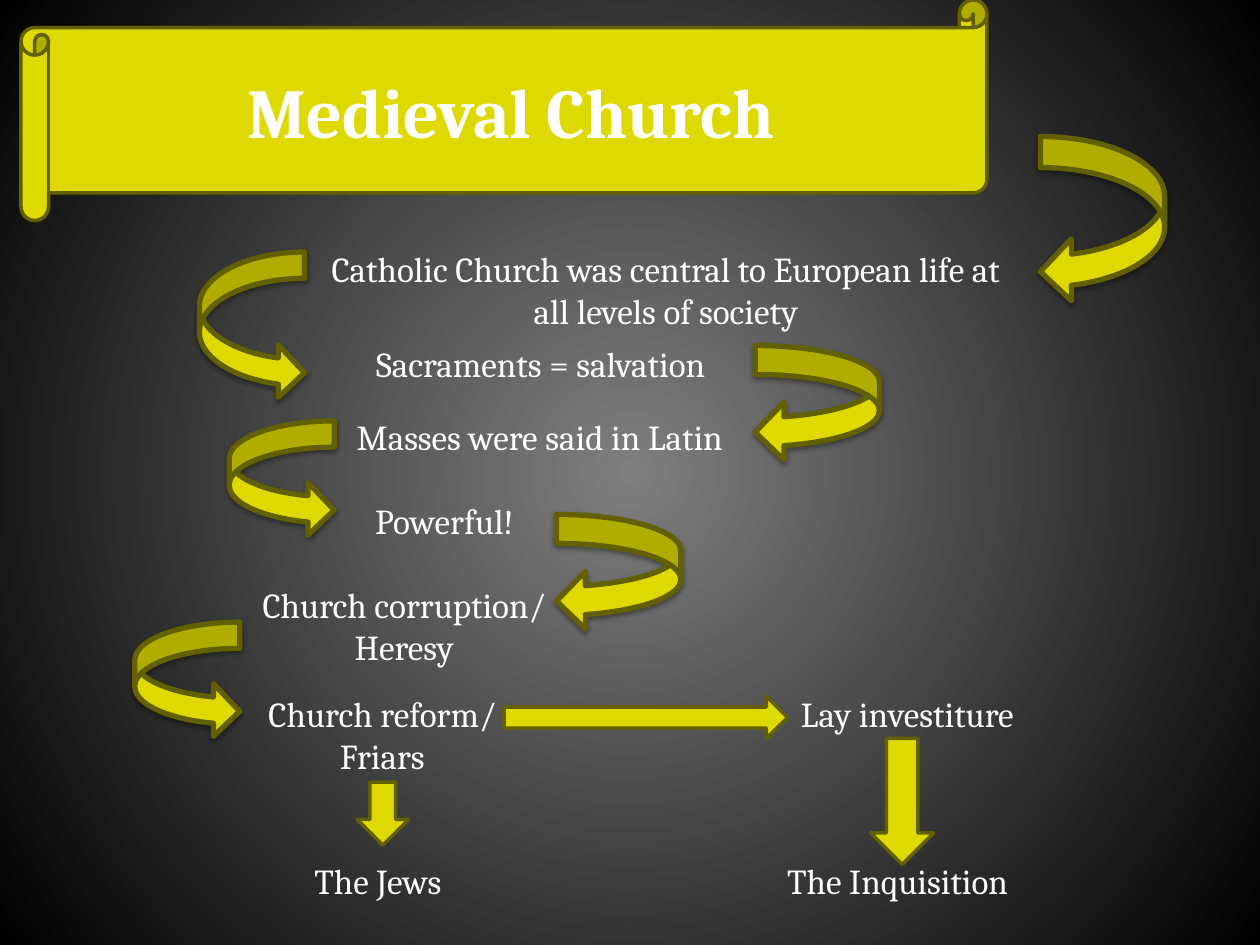
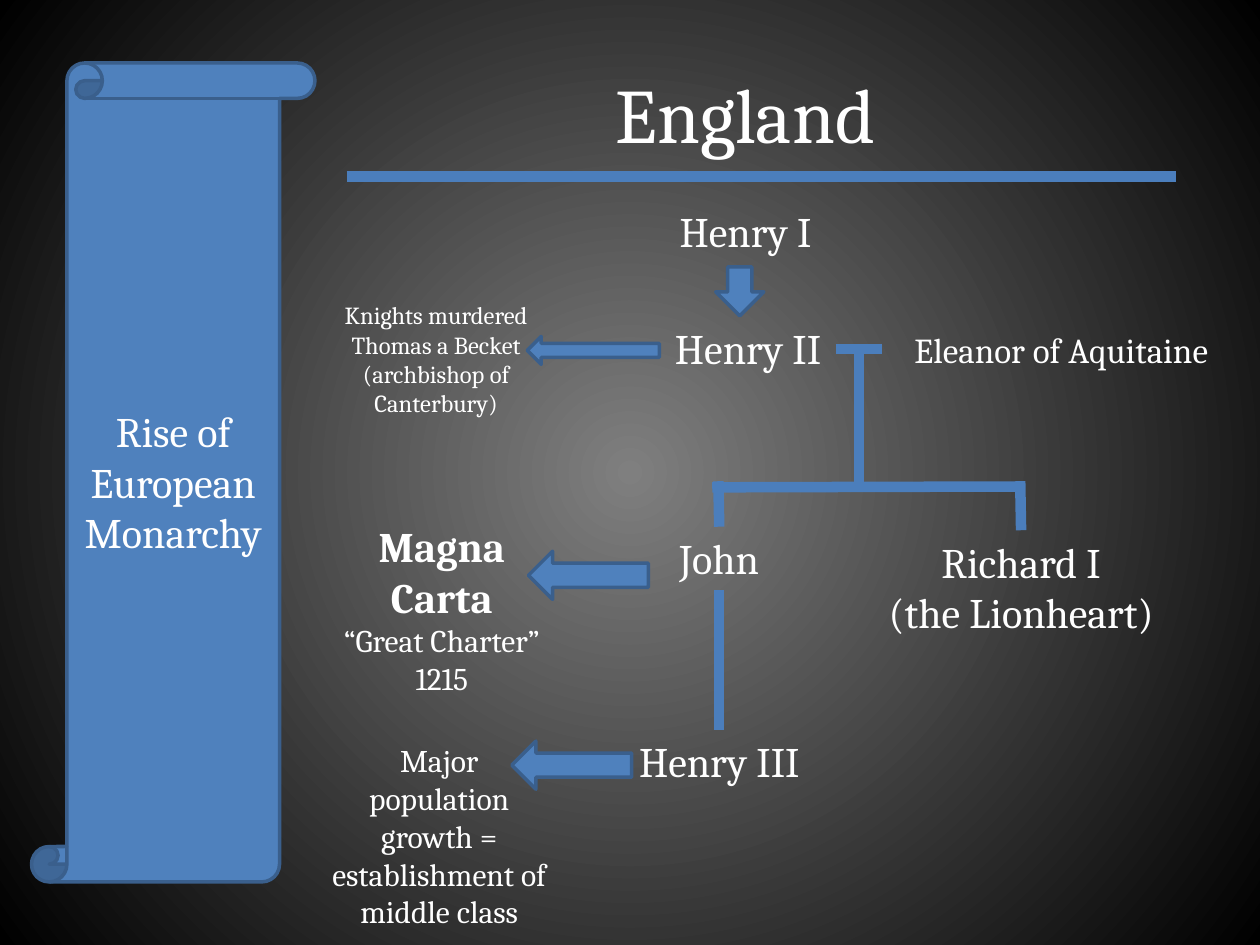
from dataclasses import dataclass

from lxml import etree
from pptx import Presentation
from pptx.dml.color import RGBColor
from pptx.enum.shapes import MSO_CONNECTOR, MSO_SHAPE
from pptx.enum.text import MSO_ANCHOR, PP_ALIGN
from pptx.oxml.ns import qn
from pptx.shapes.autoshape import Shape
from pptx.shapes.connector import Connector
from pptx.slide import Slide
from pptx.util import Pt

FONT = "Cambria"
WHITE = "FFFFFF"
BACKDROP = ("7F7F7F", "000000")
TOP, LEFT, BOTTOM, RIGHT = range(4)


@dataclass(frozen=True)
class Palette:
    fill: str
    outline: str


GOLD = Palette("DED900", "626000")
BLUE = Palette("4F81BD", "3A5F8C")
TREE_LINE = "4B7EBC"


@dataclass(frozen=True)
class Box:
    left: float
    top: float
    width: float
    height: float

    def lengths(self) -> tuple:
        return Pt(self.left), Pt(self.top), Pt(self.width), Pt(self.height)


@dataclass(frozen=True)
class Label:
    text: str
    box: Box
    size: float = 20
    bold: bool = False
    align: PP_ALIGN = PP_ALIGN.CENTER


@dataclass(frozen=True)
class Arrow:
    """A block arrow; the box is the one before turning, 0 points down."""
    box: Box
    turn: float = 0


CHURCH_POINTS = [
    Label("Catholic Church was central to European life at all levels of society",
          Box(173.5, 138, 414, 55.5)),
    Label("Sacraments = salvation", Box(174, 192, 270, 31.5)),
    Label("Masses were said in Latin", Box(173.5, 234, 270, 31.5)),
    Label("Powerful!", Box(179, 282, 150, 31.5)),
    Label("Church corruption/\nHeresy", Box(24, 330, 414, 55.5)),
    Label("Church reform/\nFriars", Box(11.5, 392, 414, 55.5)),
    Label("Lay investiture", Box(389.5, 392, 258, 31.5)),
    Label("The Inquisition", Box(384, 487.5, 258, 31.5)),
    Label("The Jews", Box(87, 487.5, 258, 31.5)),
]

# Steps swing alternately down the right and the left of the text.
CHURCH_SWINGS = [
    Box(582.5, 90, 95, 71),
    Box(102, 156, 84, 60),
    Box(434, 195, 66, 71),
    Box(128, 243.5, 66, 60),
    Box(320.5, 291.5, 66, 71),
    Box(74, 358.5, 66, 60),
]

CHURCH_ARROWS = [
    Arrow(Box(357, 329, 24, 162), 270),
    Arrow(Box(497.5, 422, 36, 72)),
    Arrow(Box(204, 447, 29.5, 36)),
]

ENGLAND_NOTES = [
    Label("England", Box(120, 34.5, 612, 66), 44),
    Label("Henry I", Box(219, 114, 414, 36), 24),
    Label("Knights murdered Thomas a Becket (archbishop of Canterbury)",
          Box(171.5, 168, 155.5, 75), 14),
    Label("Major population growth = establishment of middle class",
          Box(182, 420, 138, 116.5), 18),
]
HENRY_II = Label("Henry II", Box(377.5, 181, 100, 37), 24)
ELEANOR = Label("Eleanor of Aquitaine", Box(504, 184, 193.5, 31), align=PP_ALIGN.RIGHT)
JOHN = Label("John", Box(360.5, 301, 101, 36), 24)
RICHARD = Label("Richard I\n(the Lionheart)", Box(497.5, 303, 172, 65.5), 24)
HENRY_III = Label("Henry III", Box(204, 417, 414, 36), 24)
MAGNA_CARTA = Label("Magna Carta\n“Great Charter”\n1215",
                    Box(183.5, 294, 138, 108.5), 24, bold=True)

ENGLAND_ARROWS = [
    Arrow(Box(409, 152.5, 27.5, 28)),
    Arrow(Box(331, 162.5, 16, 75.5), 90),
    Arrow(Box(322.5, 294.5, 27.5, 68.5), 90),
    Arrow(Box(313, 403, 27.5, 68.5), 90),
]


def color(code: str) -> RGBColor:
    return RGBColor.from_string(code)


def set_backdrop(slide_base) -> None:
    """Fill the background with a gradient that spreads from the centre."""
    fill = slide_base.background.fill
    fill.gradient()
    for stop, position, code in zip(fill.gradient_stops, (0, 1), BACKDROP):
        stop.position = position
        stop.color.rgb = color(code)
    gradient = slide_base.element.find(".//" + qn("a:gradFill"))
    gradient.remove(gradient.find(qn("a:lin")))
    spread = etree.SubElement(gradient, qn("a:path"), path="circle")
    etree.SubElement(spread, qn("a:fillToRect"), l="50000", t="50000", r="50000", b="50000")


def style_paragraph(paragraph, size: float, bold: bool = False,
                    align: PP_ALIGN = PP_ALIGN.CENTER) -> None:
    paragraph.alignment = align
    for run in paragraph.runs:
        run.font.name = FONT
        run.font.size = Pt(size)
        run.font.bold = bold
        run.font.color.rgb = color(WHITE)


def fill_text(shape: Shape, label: Label) -> None:
    frame = shape.text_frame
    frame.word_wrap = True
    frame.text = label.text
    for paragraph in frame.paragraphs:
        style_paragraph(paragraph, label.size, label.bold, label.align)


def add_label(slide: Slide, label: Label) -> Shape:
    shape = slide.shapes.add_textbox(*label.box.lengths())
    fill_text(shape, label)
    return shape


def add_block(slide: Slide, kind: MSO_SHAPE, box: Box, palette: Palette,
              weight: float = 2, turn: float = 0) -> Shape:
    block = slide.shapes.add_shape(kind, *box.lengths())
    block.shadow.inherit = False
    block.fill.solid()
    block.fill.fore_color.rgb = color(palette.fill)
    block.line.color.rgb = color(palette.outline)
    block.line.width = Pt(weight)
    block.rotation = turn
    return block


def add_scroll(slide: Slide, kind: MSO_SHAPE, label: Label, palette: Palette) -> None:
    scroll = add_block(slide, kind, label.box, palette)
    fill_text(scroll, label)
    scroll.text_frame.vertical_anchor = MSO_ANCHOR.MIDDLE


def add_arrows(slide: Slide, arrows: list[Arrow], palette: Palette) -> None:
    for arrow in arrows:
        add_block(slide, MSO_SHAPE.DOWN_ARROW, arrow.box, palette, turn=arrow.turn)


def add_swing(slide: Slide, box: Box, on_left: bool) -> None:
    """Add a curved arrow that bends down one side, with a soft shadow."""
    swing = add_block(slide, MSO_SHAPE.CURVED_UP_ARROW, box, GOLD, 3, 270)
    properties = swing.element.spPr
    frame = properties.find(qn("a:xfrm"))
    frame.set("flipH", "1")
    if on_left:
        frame.set("flipV", "1")
    shadow = etree.SubElement(properties.find(qn("a:effectLst")), qn("a:outerShdw"),
                              blurRad=str(Pt(3.1)), dist=str(Pt(1.6)),
                              dir="5400000", rotWithShape="0")
    tint = etree.SubElement(shadow, qn("a:srgbClr"), val="000000")
    etree.SubElement(tint, qn("a:alpha"), val="38000")


def add_line(slide: Slide, x1: float, y1: float, x2: float, y2: float) -> Connector:
    line = slide.shapes.add_connector(MSO_CONNECTOR.STRAIGHT, Pt(x1), Pt(y1), Pt(x2), Pt(y2))
    line.line.color.rgb = color(TREE_LINE)
    line.line.width = Pt(6)
    etree.SubElement(line.element.spPr, qn("a:effectLst"))
    return line


def build_church(slide: Slide) -> None:
    add_scroll(slide, MSO_SHAPE.HORIZONTAL_SCROLL,
               Label("Medieval Church", Box(12, 0, 552, 126), 40, bold=True), GOLD)
    for point in CHURCH_POINTS:
        add_label(slide, point)
    for step, box in enumerate(CHURCH_SWINGS):
        add_swing(slide, box, on_left=step % 2 == 1)
    add_arrows(slide, CHURCH_ARROWS, GOLD)


def build_england(slide: Slide) -> None:
    add_scroll(slide, MSO_SHAPE.VERTICAL_SCROLL,
               Label("Rise of European Monarchy", Box(18, 36, 162, 468), 24), BLUE)
    add_line(slide, 198, 101, 672, 101)
    for note in ENGLAND_NOTES:
        add_label(slide, note)
    charter = add_label(slide, MAGNA_CARTA)
    for paragraph in charter.text_frame.paragraphs[1:]:
        style_paragraph(paragraph, 18)
    add_arrows(slide, ENGLAND_ARROWS, BLUE)

    henry_ii, eleanor, john, richard, henry_iii = (
        add_label(slide, person) for person in (HENRY_II, ELEANOR, JOHN, RICHARD, HENRY_III))
    marriage = add_line(slide, 477.5, 199.5, 504, 199.5)
    marriage.begin_connect(henry_ii, RIGHT)
    marriage.end_connect(eleanor, LEFT)
    add_line(slide, 491, 277, 491, 201)
    add_line(slide, 407, 278.5, 584.5, 278)
    for son, x in ((john, 410.5), (richard, 583)):
        add_line(slide, x, 275, x, 301).end_connect(son, TOP)
    succession = add_line(slide, 411, 337, 411, 417)
    succession.begin_connect(john, BOTTOM)
    succession.end_connect(henry_iii, TOP)


def main() -> None:
    deck = Presentation()
    deck.slide_width, deck.slide_height = Pt(720), Pt(540)
    set_backdrop(deck.slide_master)
    blank = deck.slide_layouts[6]
    for build in (build_church, build_england):
        build(deck.slides.add_slide(blank))
    deck.save("out.pptx")


if __name__ == "__main__":
    main()
